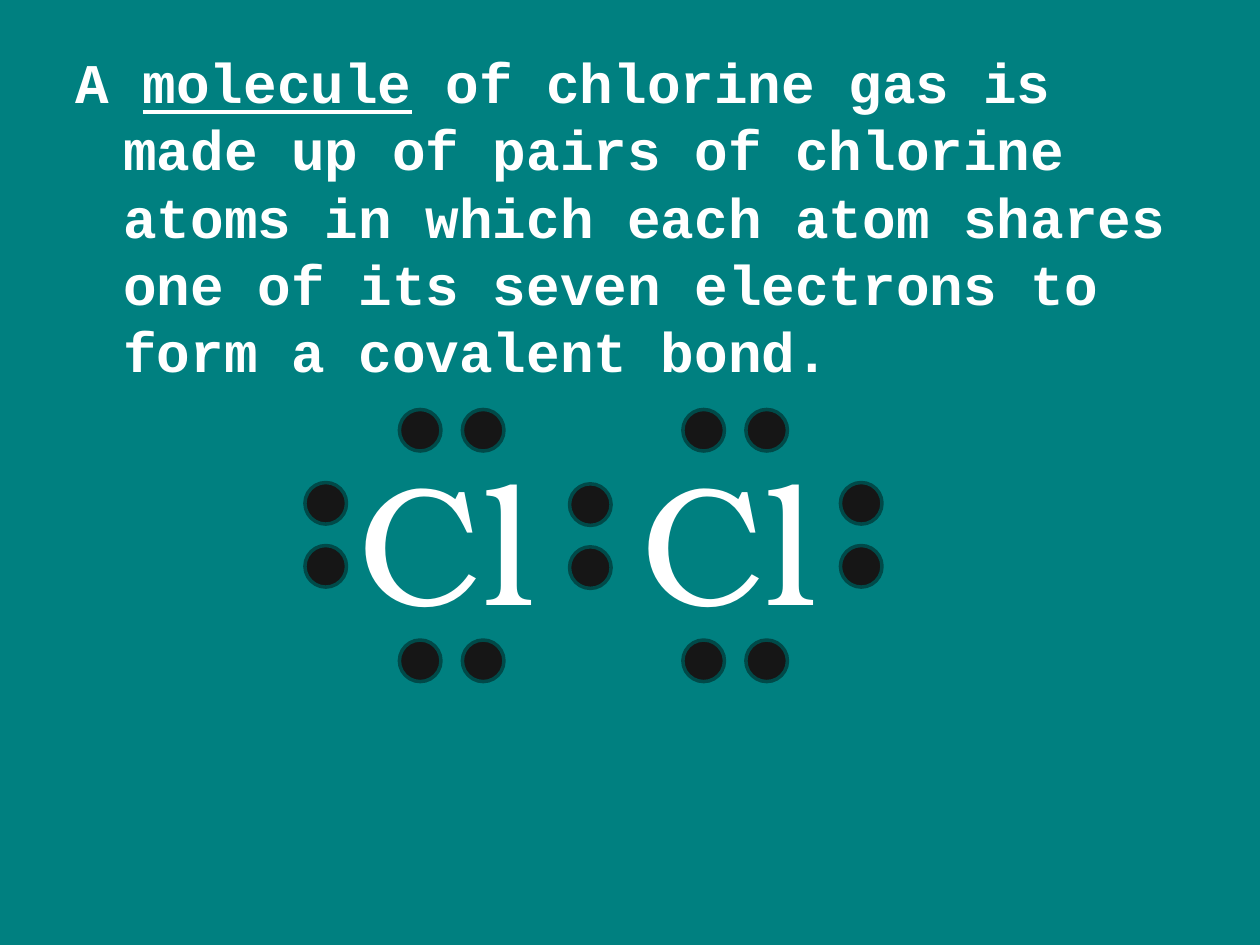
from pptx import Presentation
from pptx.dml.color import RGBColor
from pptx.enum import shapes
from pptx.util import Inches, Pt

TEAL = RGBColor(0x00, 0x80, 0x80)
WHITE = RGBColor(0xFF, 0xFF, 0xFF)
ELECTRON = RGBColor(0x16, 0x16, 0x16)
RIM = RGBColor(0x00, 0x4A, 0x49)

DIAMETER = 0.33
PAIR_GAP = 0.5
BODY = {"name": "Courier New", "size": Pt(32), "bold": True}
SYMBOL = {"name": "TeX Gyre Bonum", "size": Pt(96)}


def add_text(slide, box, runs, style):
    """Add one white paragraph from (text, underlined) runs."""
    tf = slide.shapes.add_textbox(*map(Inches, box)).text_frame
    tf.word_wrap = True
    p = tf.paragraphs[0]
    for content, underlined in runs:
        r = p.add_run()
        r.text = content
        for key, value in style.items():
            setattr(r.font, key, value)
        r.font.color.rgb = WHITE
        if underlined:
            r.font.underline = True
    return p


def hang_indent(p, depth):
    pPr = p._p.get_or_add_pPr()
    pPr.set("marL", str(Inches(depth)))
    pPr.set("indent", str(-Inches(depth)))


def add_electron(parent, left, top, rotation):
    sp = parent.shapes.add_shape(
        shapes.MSO_SHAPE.OVAL, *map(Inches, (left, top, DIAMETER, DIAMETER)))
    sp.rotation = rotation
    sp.shadow.inherit = False
    sp.fill.solid()
    sp.fill.fore_color.rgb = ELECTRON
    sp.line.color.rgb = RIM
    sp.line.width = Pt(2)


def add_row_pair(slide, left, top):
    for i in range(2):
        add_electron(slide, left + i * PAIR_GAP, top, 0)


def add_column_pair(slide, left, top):
    group = slide.shapes.add_group_shape()
    for i in range(2):
        add_electron(group, left, top + i * PAIR_GAP, 90)


def main():
    prs = Presentation()
    prs.slide_width, prs.slide_height = Inches(10), Inches(7.5)
    slide = prs.slides.add_slide(prs.slide_layouts[6])
    slide.background.fill.solid()
    slide.background.fill.fore_color.rgb = TEAL

    p = add_text(slide, (0.5, 0.33, 9, 2), [
        ("A ", False),
        ("molecule", True),
        (" of chlorine gas is made up of pairs of chlorine atoms in which "
         "each atom shares one of its seven electrons to form a covalent "
         "bond.", False),
    ], BODY)
    p.space_before = Pt(6.4)
    hang_indent(p, 0.38)

    add_text(slide, (2.75, 3.42, 4.42, 1.72), [("Cl  Cl", False)], SYMBOL)

    for left in (3.17, 5.42):
        for top in (3.25, 5.08):
            add_row_pair(slide, left, top)
    for left, top in ((2.42, 3.83), (4.52, 3.84), (6.67, 3.83)):
        add_column_pair(slide, left, top)

    prs.save("out.pptx")


if __name__ == "__main__":
    main()
